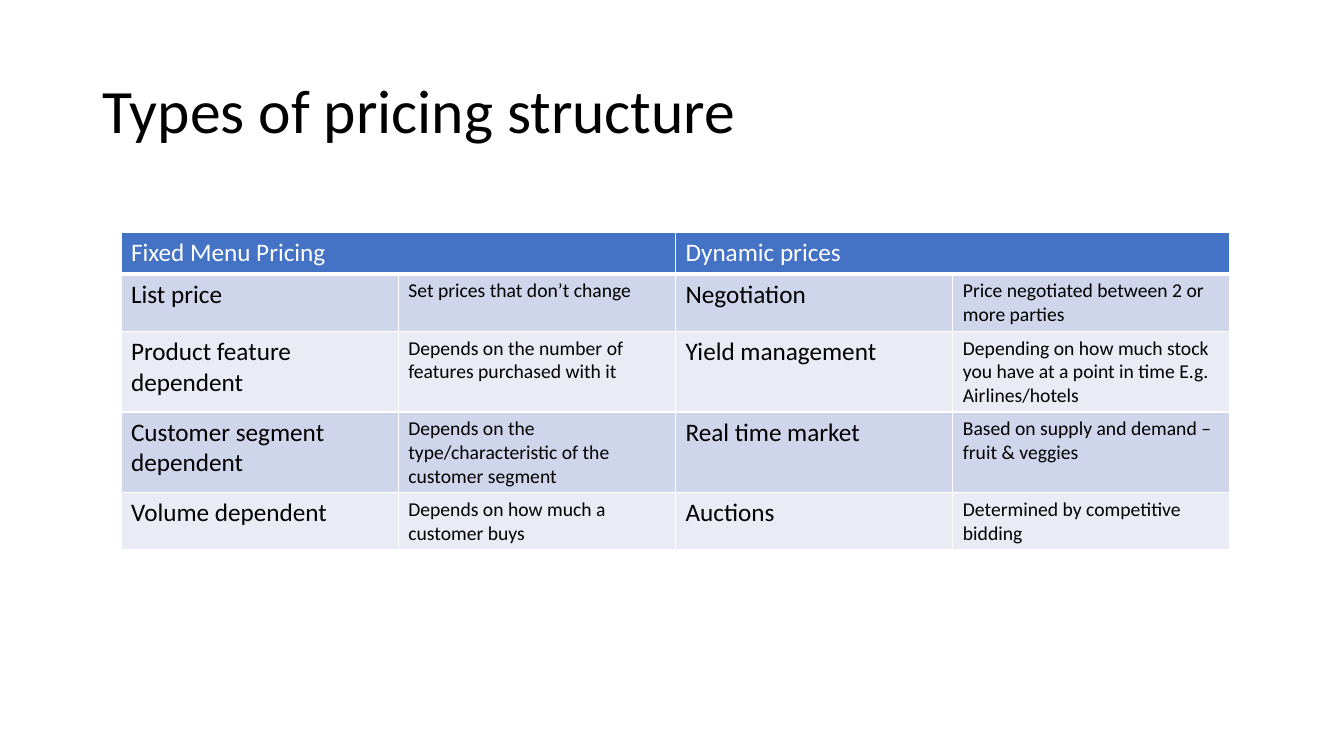
import pptx
import pptx.util
import pptx.dml.color
import pptx.enum.text
import pptx.oxml
import pptx.oxml.ns

RGB = pptx.dml.color.RGBColor
BLACK = RGB(0x00, 0x00, 0x00)
WHITE = RGB(0xFF, 0xFF, 0xFF)
BLUE = RGB(0x44, 0x72, 0xC4)
BANDS = [RGB(0xCF, 0xD5, 0xEA), RGB(0xE9, 0xEB, 0xF5)]

WIDE, HIGH = 13.33, 7.5
COL, ROW = 2.75, 0.41  # table grid, in inches
TERM, NOTE = 18, 14  # text sizes, in points

HEADS = ["Fixed Menu Pricing", "Dynamic prices"]
ROWS = [
    ["List price", "Set prices that don’t change",
     "Negotiation", "Price negotiated between 2 or more parties"],
    ["Product feature dependent", "Depends on the number of features purchased with it",
     "Yield management",
     "Depending on how much stock you have at a point in time E.g. Airlines/hotels"],
    ["Customer segment dependent",
     "Depends on the type/characteristic of the customer segment",
     "Real time market", "Based on supply and demand – fruit & veggies"],
    ["Volume dependent", "Depends on how much a customer buys",
     "Auctions", "Determined by competitive bidding"],
]


def inch(size):
    return pptx.util.Inches(size)


def write(frame, text, size, color):
    para = frame.paragraphs[0]
    run = para.add_run()
    run.text = text
    style = {"name": "Calibri", "size": pptx.util.Pt(size), "bold": False}
    for key, value in style.items():
        setattr(run.font, key, value)
    run.font.color.rgb = color
    return para


def border(cell, base):
    # Border lines come before the fill in the cell properties
    props = cell._tc.get_or_add_tcPr()
    sides = {"L": 1, "R": 1, "T": 1, "B": base}
    for spot, (side, width) in enumerate(sides.items()):
        line = pptx.oxml.parse_xml(
            f'<a:ln{side} {pptx.oxml.ns.nsdecls("a")} w="{pptx.util.Pt(width)}">'
            f'<a:solidFill><a:srgbClr val="{WHITE}"/></a:solidFill></a:ln{side}>')
        props.insert(spot, line)


def paint(cell, fill, base=1):
    cell.fill.solid()
    cell.fill.fore_color.rgb = fill
    border(cell, base)


def title(slide, text):
    box = slide.shapes.add_textbox(inch(0.92), inch(0.4), inch(11.5), inch(1.45))
    frame = box.text_frame
    frame.word_wrap = True
    frame.vertical_anchor = pptx.enum.text.MSO_ANCHOR.MIDDLE
    write(frame, text, 44, BLACK).line_spacing = 0.9


def table(slide, left, top):
    count, wide = len(ROWS) + 1, len(ROWS[0])
    frame = slide.shapes.add_table(count, wide, inch(left), inch(top),
                                   inch(wide * COL), inch(count * ROW))
    grid = frame.table
    for col in grid.columns:
        col.width = inch(COL)
    for row in grid.rows:
        row.height = inch(ROW)

    # Header cells, each over two columns
    for spot, text in enumerate(HEADS):
        first, last = grid.cell(0, 2 * spot), grid.cell(0, 2 * spot + 1)
        first.merge(last)
        write(first.text_frame, text, TERM, WHITE)
        for cell in (first, last):
            paint(cell, BLUE, 3)

    # Banded body: terms and their notes alternate
    for y, texts in enumerate(ROWS):
        for x, text in enumerate(texts):
            cell = grid.cell(y + 1, x)
            write(cell.text_frame, text, NOTE if x % 2 else TERM, BLACK)
            paint(cell, BANDS[y % 2])


def main():
    deck = pptx.Presentation()
    deck.slide_width, deck.slide_height = inch(WIDE), inch(HIGH)
    slide = deck.slides.add_slide(deck.slide_layouts[6])
    title(slide, "Types of pricing structure")
    table(slide, 1.2, 2.31)
    deck.save("out.pptx")


if __name__ == "__main__":
    main()
